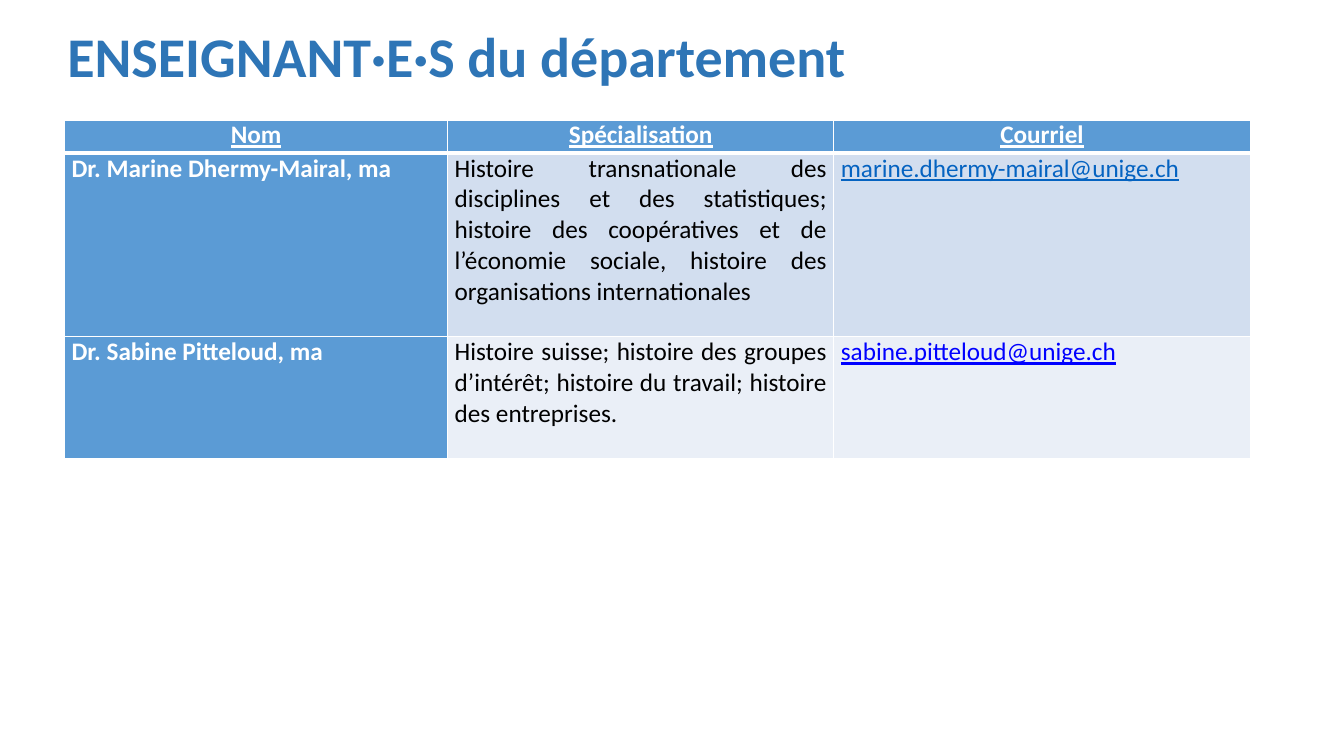
"""Build the slide listing the department's teachers."""
from lxml.etree import SubElement
from pptx import Presentation
from pptx.dml.color import RGBColor as Color
from pptx.enum.text import MSO_ANCHOR as Anchor, PP_ALIGN as Align
from pptx.oxml.ns import qn
from pptx.util import Inches, Pt

COLORS = {
    "title": "2E75B6", "header": "5B9BD5", "odd": "D2DEEF", "even": "EAEFF7",
    "white": "FFFFFF", "black": "000000", "mail": "0563C1", "bright_mail": "0000FF",
}
HEADINGS = ["Nom", "Spécialisation", "Courriel"]
TEACHERS = [
    ("Dr. Marine Dhermy-Mairal, ma",
     "Histoire transnationale des disciplines et des statistiques; histoire des "
     "coopératives et de l’économie sociale, histoire des organisations internationales",
     "marine.dhermy-mairal@unige.ch", "odd", "mail"),
    ("Dr. Sabine Pitteloud, ma",
     "Histoire suisse; histoire des groupes d’intérêt; histoire du travail; "
     "histoire des entreprises.",
     "sabine.pitteloud@unige.ch", "even", "bright_mail"),
]
COLUMN_WIDTHS = [3.8, 3.83, 4.13]
ROW_HEIGHTS = [0.33, 1.82, 1.21]


class SlideBuilder:
    def __init__(self, slide, font="Calibri"):
        self.slide = slide
        self.font = font

    def color(self, name):
        return Color.from_string(COLORS[name])

    def span(self, para, text, size, color, bold=False, underline=False):
        span = para.add_run()
        span.text = text
        span.font.name = self.font
        span.font.size = Pt(size)
        span.font.bold = bold
        span.font.underline = underline
        span.font.color.rgb = self.color(color)

    def title(self, text, left, top, width, height):
        box = self.slide.shapes.add_textbox(
            Inches(left), Inches(top), Inches(width), Inches(height))
        frame = box.text_frame
        frame.word_wrap = True
        frame.vertical_anchor = Anchor.MIDDLE
        para = frame.paragraphs[0]
        para.line_spacing = 0.9
        self.span(para, text, 40, color="title", bold=True)

    def table(self, left, top, widths, heights):
        frame = self.slide.shapes.add_table(
            len(heights), len(widths), Inches(left), Inches(top),
            Inches(sum(widths)), Inches(sum(heights)))
        table = frame.table
        for column, width in zip(table.columns, widths):
            column.width = Inches(width)
        for row, height in zip(table.rows, heights):
            row.height = Inches(height)
        return table

    def borders(self, cell, top=1, bottom=1):
        properties = cell._tc.get_or_add_tcPr()
        for side, points in (("L", 1), ("R", 1), ("T", top), ("B", bottom)):
            line = SubElement(properties, qn(f"a:ln{side}"), w=str(Pt(points)))
            fill = SubElement(line, qn("a:solidFill"))
            SubElement(fill, qn("a:srgbClr"), val=COLORS["white"])

    def cell(self, cell, text, fill, color, align=Align.JUSTIFY,
             bold=False, underline=False, top=1, bottom=1):
        self.borders(cell, top, bottom)
        cell.fill.solid()
        cell.fill.fore_color.rgb = self.color(fill)
        cell.margin_left = cell.margin_right = Inches(0.07)
        cell.margin_top = cell.margin_bottom = 0
        para = cell.text_frame.paragraphs[0]
        para.alignment = align
        self.span(para, text, 18, color, bold, underline)


def main():
    deck = Presentation()
    deck.slide_width = Inches(13.33)
    deck.slide_height = Inches(7.5)
    page = SlideBuilder(deck.slides.add_slide(deck.slide_layouts[6]))

    table = page.table(0.64, 1.19, COLUMN_WIDTHS, ROW_HEIGHTS)
    for column, heading in enumerate(HEADINGS):
        page.cell(table.cell(0, column), heading, "header", "white",
                  align=Align.CENTER, bold=True, underline=True, bottom=3)
    for row, (name, field, mail, fill, mail_color) in enumerate(TEACHERS, start=1):
        top = 3 if row == 1 else 1
        page.cell(table.cell(row, 0), name, "header", "white", bold=True, top=top)
        page.cell(table.cell(row, 1), field, fill, "black", top=top)
        page.cell(table.cell(row, 2), mail, fill, mail_color, underline=True, top=top)

    page.title("ENSEIGNANT·E·S du département", 0.57, -0.14, 11.5, 1.45)
    deck.save("out.pptx")


if __name__ == "__main__":
    main()
